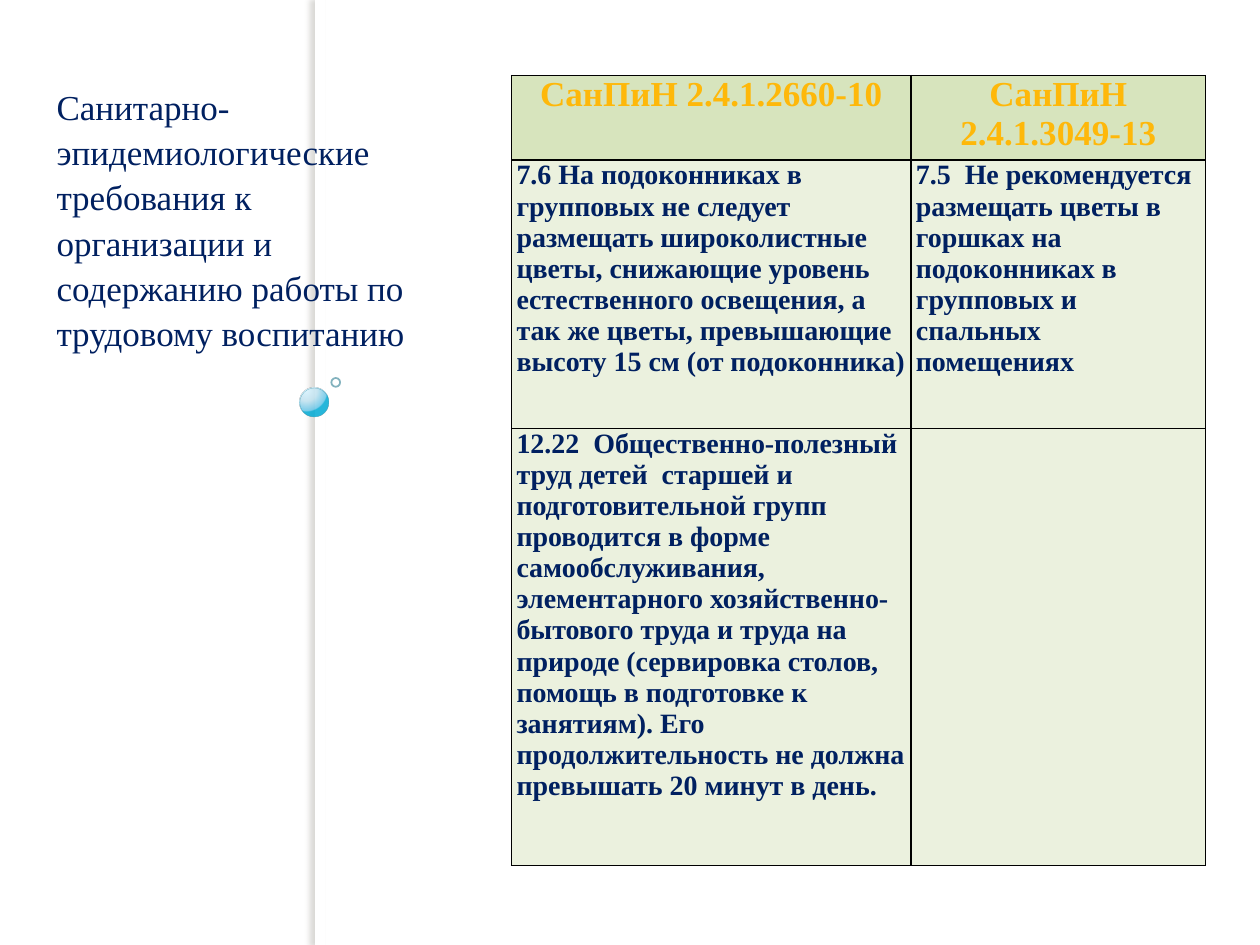
from lxml.etree import SubElement
from pptx import Presentation
from pptx.dml.color import RGBColor
from pptx.enum.shapes import MSO_SHAPE
from pptx.enum.text import MSO_ANCHOR, PP_ALIGN
from pptx.oxml.ns import qn
from pptx.util import Inches, Pt

NAVY = RGBColor(0x00, 0x20, 0x60)
GOLD = RGBColor(0xFE, 0xB8, 0x0A)
WHITE = RGBColor(0xFF, 0xFF, 0xFF)
BLACK = RGBColor(0x00, 0x00, 0x00)
HEADER_GREEN = RGBColor(0xD7, 0xE4, 0xBD)
BODY_GREEN = RGBColor(0xEB, 0xF1, 0xDE)
BALL_EDGE = RGBColor(0x30, 0x8E, 0xA5)
RING_EDGE = RGBColor(0x31, 0x80, 0x93)
STRIP_SHADE = RGBColor(0x73, 0x6F, 0x63)
# Colour, position and opacity in percent
BALL_STOPS = [
    (RGBColor(0xDA, 0xF4, 0xFF), 0, 95),
    (RGBColor(0xC3, 0xE3, 0xF0), 50, 90),
    (RGBColor(0x6B, 0xC7, 0xE8), 95, 88),
    (RGBColor(0x00, 0xAB, 0xD5), 100, 85),
]

FONT = "Times New Roman"
TITLE_FORMAT = {"name": FONT, "size": Pt(20)}
HEADER_FORMAT = {"name": FONT, "size": Pt(20), "bold": True}
BODY_FORMAT = {"name": FONT, "size": Pt(16), "bold": True}

TITLE = ("Санитарно-эпидемиологические требования к  организации и "
         "содержанию работы по трудовому воспитанию")
ROWS = [
    ("СанПиН 2.4.1.2660-10", "СанПиН 2.4.1.3049-13"),
    ("7.6 На подоконниках в групповых не следует размещать широколистные "
     "цветы, снижающие уровень естественного освещения, а так же цветы, "
     "превышающие высоту 15 см (от подоконника)",
     "7.5  Не рекомендуется размещать цветы в горшках на подоконниках в "
     "групповых и спальных помещениях"),
    ("12.22  Общественно-полезный труд детей  старшей и подготовительной "
     "групп проводится в форме самообслуживания, элементарного "
     "хозяйственно-бытового труда и труда на природе (сервировка столов, "
     "помощь в подготовке к занятиям). Его продолжительность не должна "
     "превышать 20 минут в день.", ""),
]
COLUMN_WIDTHS = (3.17, 2.34)
ROW_HEIGHTS = (0.67, 2.13, 3.47)


def add_element(parent, tag, **attributes):
    return SubElement(parent, qn(tag), {k: str(v) for k, v in attributes.items()})


def add_color(parent, color, opacity=100):
    node = add_element(parent, "a:srgbClr", val=color)
    if opacity < 100:
        add_element(node, "a:alpha", val=opacity * 1000)


def add_plain_shape(page, kind, left, top, width, height):
    shape = page.shapes.add_shape(
        kind, Inches(left), Inches(top), Inches(width), Inches(height))
    shape.shadow.inherit = False
    shape.fill.background()
    shape.line.fill.background()
    return shape


def set_outline(shape, color, width, opacity):
    shape.line.color.rgb = color
    shape.line.width = Pt(width)
    solid = shape.line._get_or_add_ln().find(qn("a:solidFill"))
    add_element(solid[0], "a:alpha", val=opacity * 1000)


def set_left_shadow(shape, color, opacity):
    effects = shape._element.spPr.find(qn("a:effectLst"))
    shadow = add_element(effects, "a:outerShdw", blurRad=Pt(3), dist=Pt(3),
                         dir=180 * 60000, algn="tl", rotWithShape=0)
    add_color(shadow, color, opacity)


def set_ball_gradient(shape):
    properties = shape._element.spPr
    gradient = add_element(properties, "a:gradFill", rotWithShape=1)
    properties.replace(properties.find(qn("a:noFill")), gradient)
    stops = add_element(gradient, "a:gsLst")
    for color, position, opacity in BALL_STOPS:
        add_color(add_element(stops, "a:gs", pos=position * 1000), color, opacity)
    circle = add_element(gradient, "a:path", path="circle")
    add_element(circle, "a:fillToRect", l=25000, t=12000, r=75000, b=88000)


def write_text(frame, text, color, formats, align=PP_ALIGN.LEFT):
    para = frame.paragraphs[0]
    para.alignment = align
    span = para.add_run()
    span.text = text
    for name, value in formats.items():
        setattr(span.font, name, value)
    span.font.color.rgb = color
    return para


def set_borders(cell):
    properties = cell._tc.get_or_add_tcPr()
    for index, side in enumerate(("a:lnL", "a:lnR", "a:lnT", "a:lnB")):
        line = properties.makeelement(qn(side), {"w": str(Pt(1))})
        properties.insert(index, line)
        add_color(add_element(line, "a:solidFill"), BLACK)


def add_decoration(page):
    strip = add_plain_shape(page, MSO_SHAPE.RECTANGLE, 2.5, 0, 0.08, 7.5)
    strip.fill.solid()
    strip.fill.fore_color.rgb = WHITE
    set_left_shadow(strip, STRIP_SHADE, 25)

    ball = add_plain_shape(page, MSO_SHAPE.OVAL, 2.38, 3.08, 0.23, 0.23)
    set_ball_gradient(ball)
    set_outline(ball, BALL_EDGE, 0.16, 60)

    ring = add_plain_shape(page, MSO_SHAPE.OVAL, 2.63, 3, 0.07, 0.07)
    set_outline(ring, RING_EDGE, 1, 60)


def add_comparison(page):
    table = page.shapes.add_table(
        len(ROWS), len(COLUMN_WIDTHS), Inches(4.06), Inches(0.6),
        Inches(sum(COLUMN_WIDTHS)), Inches(sum(ROW_HEIGHTS))).table
    for column, width in zip(table.columns, COLUMN_WIDTHS):
        column.width = Inches(width)
    for row, height in zip(table.rows, ROW_HEIGHTS):
        row.height = Inches(height)

    for row_index, texts in enumerate(ROWS):
        header = row_index == 0
        for column_index, text in enumerate(texts):
            cell = table.cell(row_index, column_index)
            cell.margin_left = cell.margin_right = Inches(0.04)
            cell.margin_top = cell.margin_bottom = 0
            cell.fill.solid()
            cell.fill.fore_color.rgb = HEADER_GREEN if header else BODY_GREEN
            set_borders(cell)
            if header:
                write_text(cell.text_frame, text, GOLD, HEADER_FORMAT,
                           PP_ALIGN.CENTER)
            elif text:
                write_text(cell.text_frame, text, NAVY, BODY_FORMAT)


def add_title(page):
    box = page.shapes.add_textbox(
        Inches(0.35), Inches(0.6), Inches(3.31), Inches(2.12))
    frame = box.text_frame
    frame.word_wrap = True
    frame.vertical_anchor = MSO_ANCHOR.TOP
    para = write_text(frame, TITLE, NAVY, TITLE_FORMAT)
    para.line_spacing = 1.08


def main():
    deck = Presentation()
    deck.slide_width, deck.slide_height = Inches(10), Inches(7.5)
    page = deck.slides.add_slide(deck.slide_layouts[6])
    add_decoration(page)
    add_comparison(page)
    add_title(page)
    deck.save("out.pptx")


if __name__ == "__main__":
    main()
